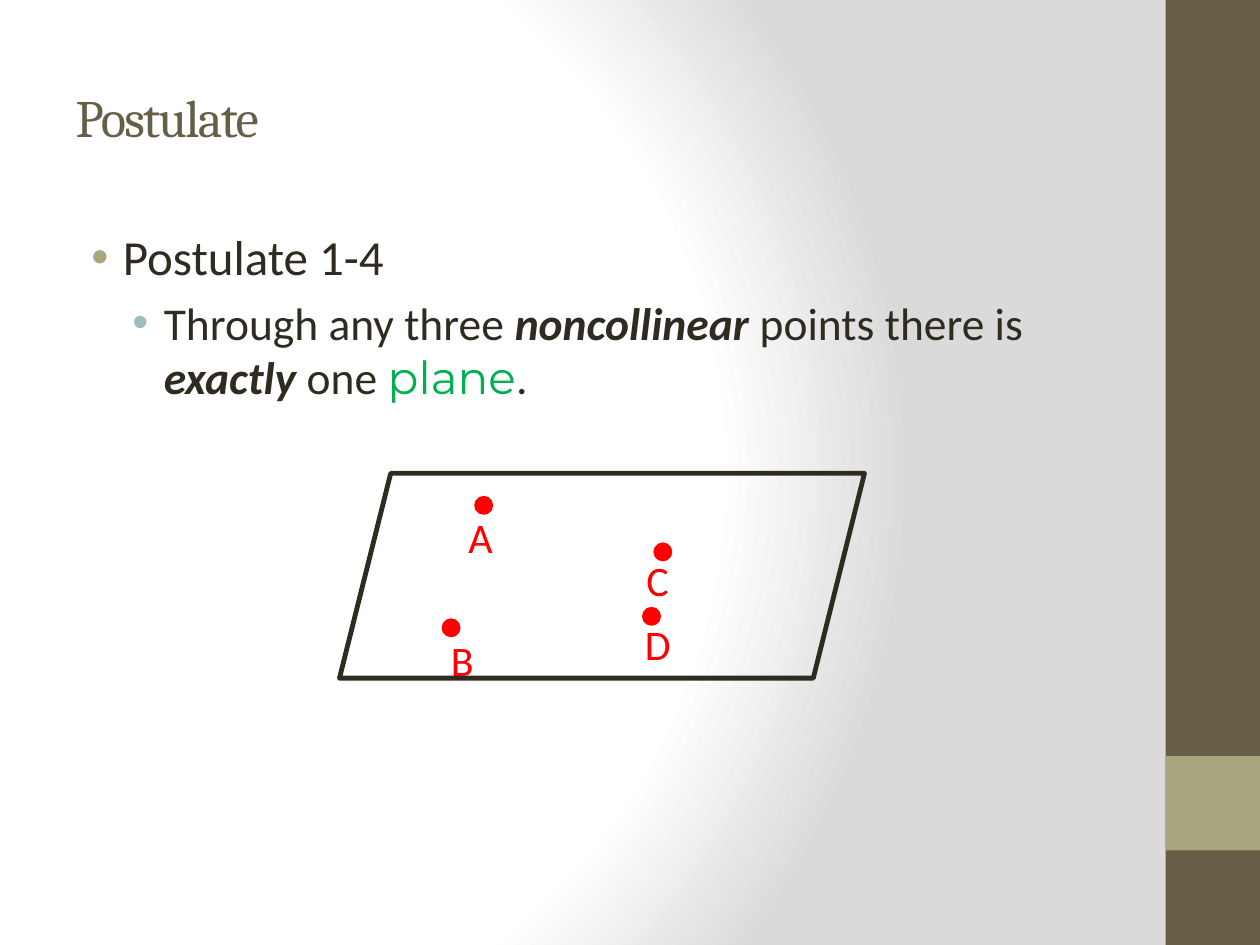
"""Build a geometry slide on the plane through three noncollinear points."""
from lxml.etree import SubElement
from pptx import Presentation
from pptx.dml.color import RGBColor
from pptx.enum.shapes import MSO_SHAPE
from pptx.enum.text import MSO_ANCHOR, PP_ALIGN
from pptx.oxml.ns import qn
from pptx.util import Pt

BROWN = RGBColor(0x67, 0x5E, 0x47)
KHAKI = RGBColor(0xA9, 0xA5, 0x7C)
TEAL = RGBColor(0x9C, 0xBE, 0xBD)
INK = RGBColor(0x2F, 0x2B, 0x20)
GREEN = RGBColor(0x00, 0xB0, 0x50)
RED = RGBColor(0xFF, 0x00, 0x00)
WHITE = RGBColor(0xFF, 0xFF, 0xFF)
GREY = RGBColor(0xDA, 0xDA, 0xDA)


def add_text(paragraph, text, size, color=INK, font="Calibri", strong=False):
    run = paragraph.add_run()
    run.text = text
    run.font.size = Pt(size)
    run.font.name = font
    run.font.color.rgb = color
    run.font.bold = run.font.italic = strong
    return run


def add_shape(shapes, kind, box, fill=None, line=None, width=0):
    shape = shapes.add_shape(kind, *map(Pt, box))
    shape.shadow.inherit = False
    if fill is None:
        shape.fill.background()
    else:
        shape.fill.solid()
        shape.fill.fore_color.rgb = fill
    if line is None:
        shape.line.fill.background()
    else:
        shape.line.color.rgb = line
        shape.line.width = Pt(width)
    return shape


presentation = Presentation()
presentation.slide_width, presentation.slide_height = Pt(720), Pt(540)
slide = presentation.slides.add_slide(presentation.slide_layouts[1])

backdrop = slide.background.fill
backdrop.gradient()
gradient = slide.background._cSld.find(".//" + qn("a:gradFill"))
for child in list(gradient):
    gradient.remove(child)
stops = SubElement(gradient, qn("a:gsLst"))
for position, color in ((0, WHITE), (75, WHITE), (100, GREY)):
    stop = SubElement(stops, qn("a:gs"), pos=str(position * 1000))
    SubElement(stop, qn("a:srgbClr"), val=str(color))
glow = SubElement(gradient, qn("a:path"), {"path": "circle"})
SubElement(glow, qn("a:fillToRect"), l="20000", t="50000", r="100000", b="50000")

add_shape(slide.shapes, MSO_SHAPE.RECTANGLE, (666, 0, 54, 540), BROWN)
add_shape(slide.shapes, MSO_SHAPE.RECTANGLE, (666, 432, 54, 54), KHAKI)

title = slide.shapes.title
title.left, title.top, title.width, title.height = map(Pt, (36, 21.6, 600, 90))
title.text_frame.vertical_anchor = MSO_ANCHOR.MIDDLE
heading = title.text_frame.paragraphs[0]
heading.alignment = PP_ALIGN.LEFT
heading_run = add_text(heading, "Postulate", 30, BROWN, "Cambria")
heading_run.font._element.set("spc", "-100")

body = slide.placeholders[1]
body.left, body.top, body.width, body.height = map(Pt, (36, 126, 600, 378))
postulate = body.text_frame.paragraphs[0]
statement = body.text_frame.add_paragraph()
statement.level = 1
for paragraph, margin, bullet_color in ((postulate, 27, KHAKI), (statement, 50.4, TEAL)):
    properties = paragraph._p.get_or_add_pPr()
    properties.set("marL", str(Pt(margin)))
    properties.set("indent", str(Pt(-18)))
    bullet = SubElement(properties, qn("a:buClr"))
    SubElement(bullet, qn("a:srgbClr"), val=str(bullet_color))
    SubElement(properties, qn("a:buFont"), typeface="Arial")
    SubElement(properties, qn("a:buChar"), char="•")

add_text(postulate, "Postulate 1-4", 28)
add_text(statement, "Through any three ", 26)
add_text(statement, "noncollinear", 26, strong=True)
add_text(statement, " points there is ", 26)
add_text(statement, "exactly", 26, strong=True)
add_text(statement, " one ", 26)
add_text(statement, "plane", 26, GREEN, "Montserrat")
add_text(statement, ".", 26)

add_shape(slide.shapes, MSO_SHAPE.PARALLELOGRAM, (194, 270.5, 300, 117), line=INK, width=2.75)

points = slide.shapes.add_group_shape().shapes
for letter, dot_at, label_at in (
    ("A", (272, 284.4), (260.6, 288.7)),
    ("B", (253.4, 354.4), (250.6, 359.3)),
    ("C", (374.4, 311), (362.2, 313.2)),
    ("D", (367.9, 347.8), (361.4, 349.9)),
):
    add_shape(points, MSO_SHAPE.OVAL, (*dot_at, 8.8, 8.8), RED, RED, 2)
    label = points.add_textbox(*map(Pt, (*label_at, 38, 36)))
    label.text_frame.word_wrap = True
    add_text(label.text_frame.paragraphs[0], letter, 24, RED)

presentation.save("out.pptx")
